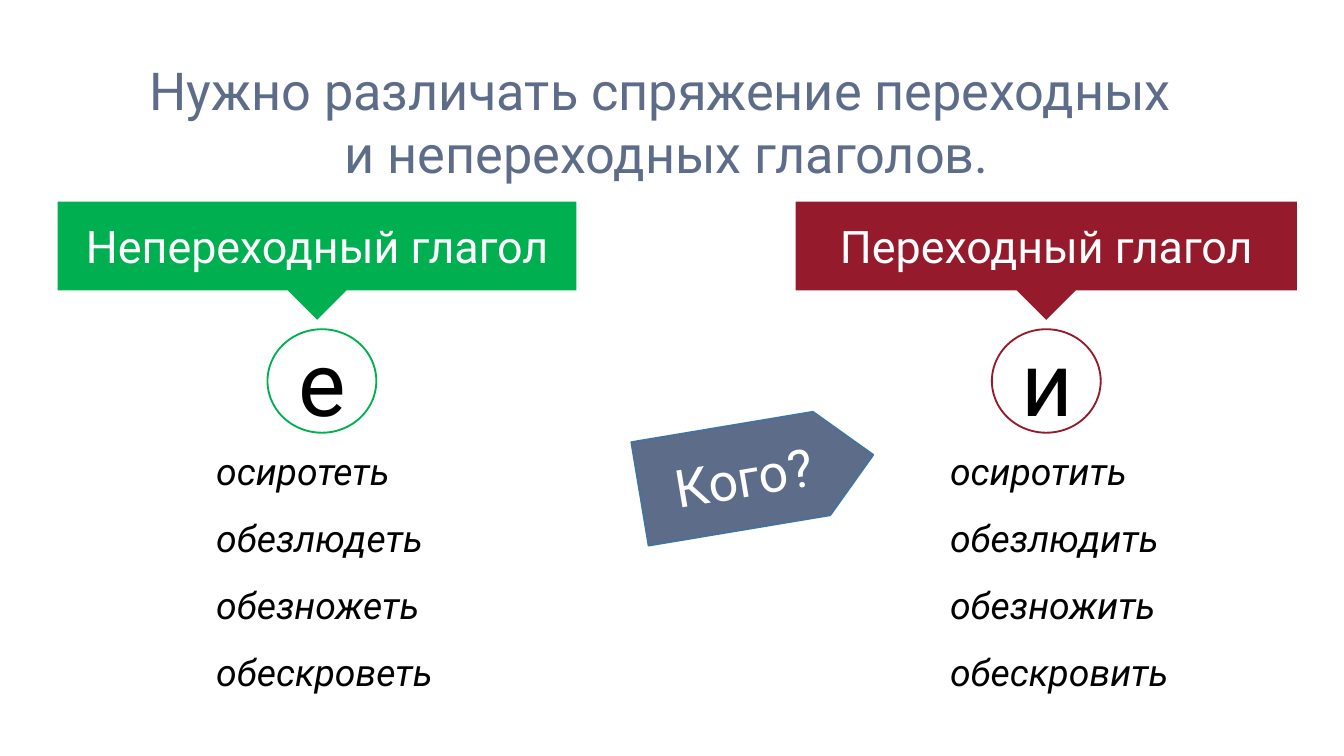
from pptx import Presentation
from pptx.dml.color import RGBColor
from pptx.enum.shapes import MSO_SHAPE as Shape
from pptx.enum.text import MSO_ANCHOR as Anchor, PP_ALIGN as Align
from pptx.util import Inches, Pt

FONT = "Roboto"
SLATE, WHITE, BLACK = "5D6C89", "FFFFFF", "000000"

TITLE = ["Нужно различать спряжение переходных ", "и непереходных глаголов."]
QUESTION = "Кого?"
COLUMNS = [
    dict(heading="Непереходный глагол", ending="е", color="00B050",
         left=0.43, width=3.86, circle_left=1.99, verbs_left=1.51,
         verbs=["осиротеть", "обезлюдеть", "обезножеть", "обескроветь"]),
    dict(heading="Переходный глагол", ending="и", color="951B2C",
         left=5.92, width=3.73, circle_left=7.38, verbs_left=6.97,
         verbs=["осиротить", "обезлюдить", "обезножить", "обескровить"]),
]


def rgb(value):
    return RGBColor.from_string(value)


def write(s, lines, size, color=BLACK, italic=False, align=Align.CENTER, spacing=1.0):
    tf = s.text_frame
    tf.word_wrap = True
    tf.vertical_anchor = Anchor.MIDDLE
    for i, line in enumerate(lines):
        p = tf.add_paragraph() if i else tf.paragraphs[0]
        p.alignment = align
        p.line_spacing = spacing
        r = p.add_run()
        r.text = line
        r.font.name, r.font.size, r.font.italic = FONT, Pt(size), italic
        r.font.color.rgb = rgb(color)


def add_shape(kind, box, fill, line=None):
    s = slide.shapes.add_shape(kind, *map(Inches, box))
    s.shadow.inherit = False
    s.fill.solid()
    s.fill.fore_color.rgb = rgb(fill)
    if line:
        s.line.color.rgb = rgb(line)
        s.line.width = Pt(1)
    else:
        s.line.fill.background()
    return s


prs = Presentation()
prs.slide_width = Inches(10)
prs.slide_height = prs.slide_width * 9 // 16
slide = prs.slides.add_slide(prs.slide_layouts[5])

title = slide.shapes.title
title.left, title.top, title.width, title.height = map(Inches, (0.43, 0.41, 9.06, 0.98))
write(title, TITLE, 28, SLATE)

for col in COLUMNS:
    callout = add_shape(Shape.DOWN_ARROW_CALLOUT, (col["left"], 1.5, col["width"], 0.88), col["color"])
    for i, share in enumerate((0.25, 0.25, 0.25, 0.75)):
        callout.adjustments[i] = share
    write(callout, [col["heading"]], 24, WHITE)

    verbs = slide.shapes.add_textbox(*map(Inches, (col["verbs_left"], 2.94, 2.52, 2.45)))
    write(verbs, col["verbs"], 20, italic=True, align=Align.LEFT, spacing=1.5)

    circle = add_shape(Shape.OVAL, (col["circle_left"], 2.45, 0.81, 0.77), WHITE, col["color"])
    write(circle, [col["ending"]], 48)

arrow = add_shape(Shape.PENTAGON, (4.75, 3.14, 1.76, 0.78), SLATE, "43739E")
arrow.rotation = 350.5
write(arrow, [QUESTION], 28, WHITE)

prs.save("out.pptx")
